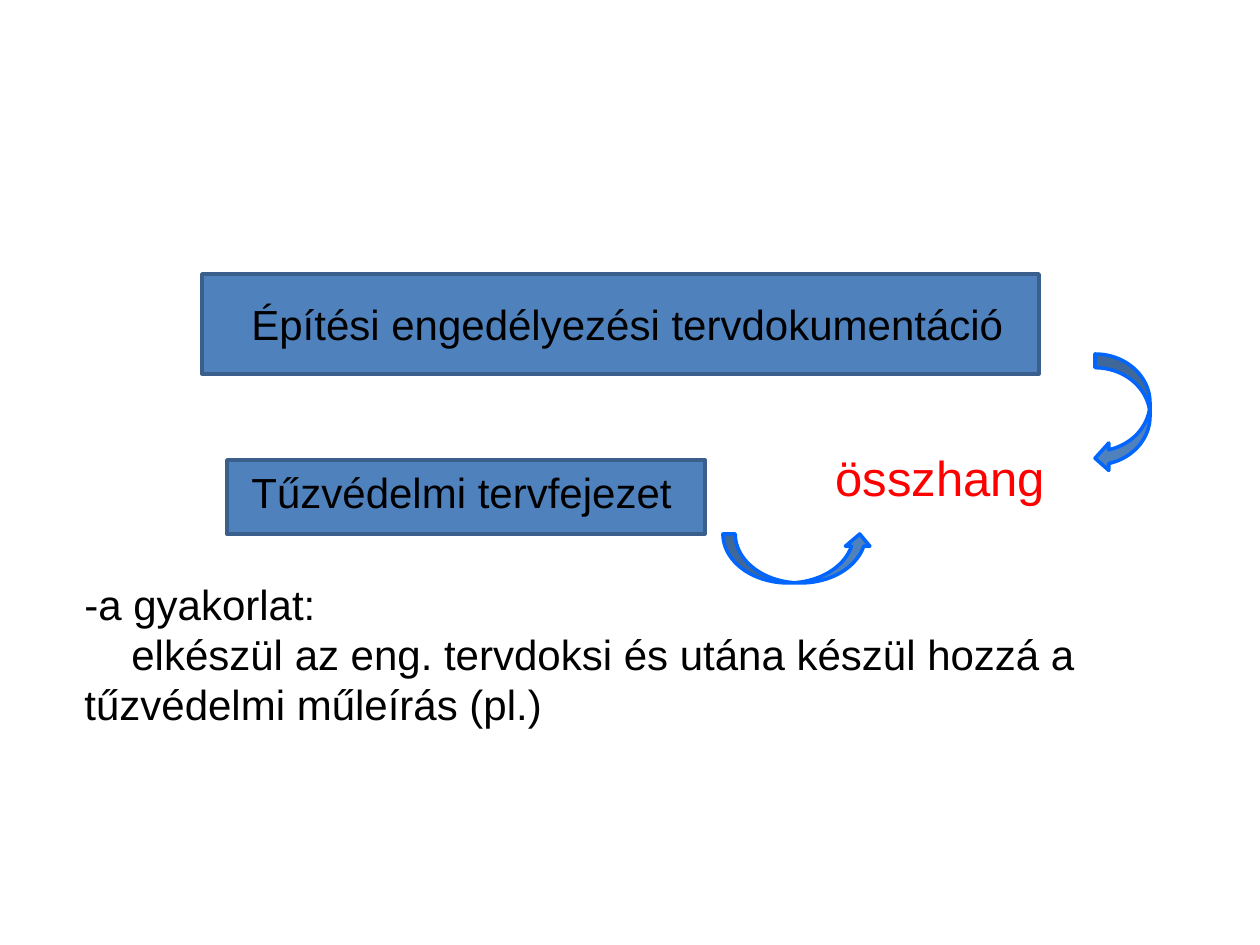
import pptx
import pptx.util
import pptx.dml.color
import pptx.enum.shapes
import pptx.enum.text

SHAPE = pptx.enum.shapes.MSO_SHAPE


def px(n):
    return pptx.util.Emu(round(n * 914400 / 126))


def tint(code):
    return pptx.dml.color.RGBColor.from_string(code)


class Page:
    """Hold the style and the current slide, and draw each kind of element."""

    font = "Arial"
    fill = "4F81BD"
    edge = "3A5F8C"
    ink = "000000"
    size = 24

    def __init__(self, slide):
        self.slide = slide

    def shape(self, kind, box, edge=None):
        item = self.slide.shapes.add_shape(kind, *map(px, box))
        item.shadow.inherit = False
        item.fill.solid()
        item.fill.fore_color.rgb = tint(self.fill)
        item.line.color.rgb = tint(edge or self.edge)
        item.line.width = pptx.util.Pt(2)

    def text(self, box, lines, size=None, ink=None, wrap=False):
        frame = self.slide.shapes.add_textbox(*map(px, box)).text_frame
        frame.word_wrap = wrap
        frame.auto_size = pptx.enum.text.MSO_AUTO_SIZE.SHAPE_TO_FIT_TEXT
        for i, (words, indent) in enumerate(lines):
            para = frame.add_paragraph() if i else frame.paragraphs[0]
            if indent:
                para._p.get_or_add_pPr().set("indent", str(px(indent)))
            run = para.add_run()
            run.text = words
            run.font.name = self.font
            run.font.size = pptx.util.Pt(size or self.size)
            run.font.color.rgb = tint(ink or self.ink)


def main():
    deck = pptx.Presentation()
    deck.slide_width, deck.slide_height = px(1260), px(945)
    page = Page(deck.slides.add_slide(deck.slide_layouts[6]))
    page.shape(SHAPE.RECTANGLE, (227, 460, 478, 74))
    page.shape(SHAPE.RECTANGLE, (202, 274, 837, 100))
    page.text((239, 292, 777, 63), [("Építési engedélyezési tervdokumentáció", 0)])
    page.text((239, 460, 446, 63), [("Tűzvédelmi tervfejezet", 0)])
    page.text((823, 441, 236, 72), [("összhang", 0)], 28, "FF0000")
    page.text((72, 572, 1153, 164), [
        ("-a gyakorlat:", 0),
        ("elkészül az eng. tervdoksi és utána készül hozzá a tűzvédelmi műleírás (pl.)", 47),
    ], wrap=True)
    page.shape(SHAPE.CURVED_UP_ARROW, (723, 534, 149, 49), "0066FF")
    page.shape(SHAPE.CURVED_LEFT_ARROW, (1095, 354, 55, 118), "0066FF")
    deck.save("out.pptx")


if __name__ == "__main__":
    main()
